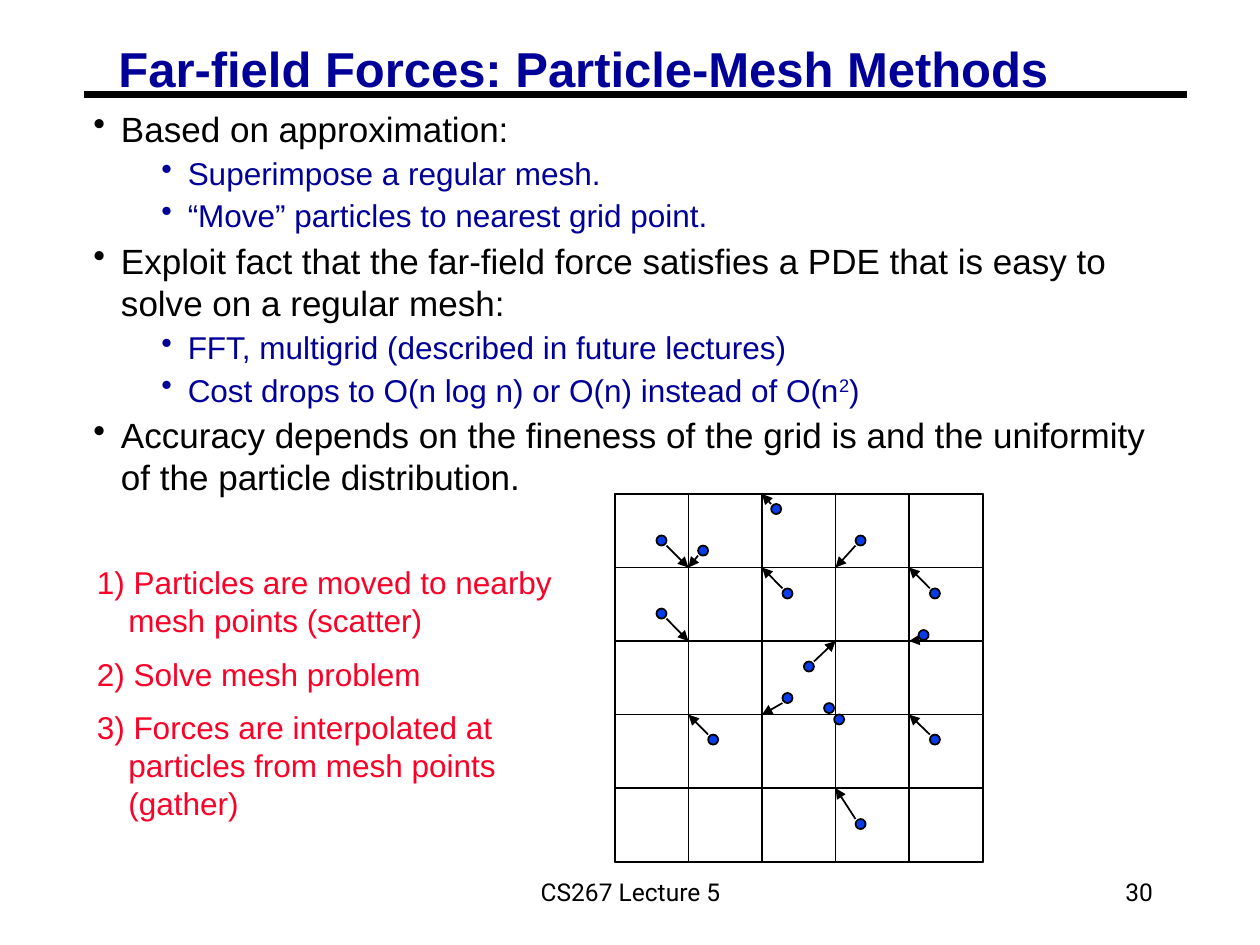
from lxml.etree import SubElement
from pptx import Presentation
from pptx.dml.color import RGBColor
from pptx.enum.shapes import MSO_CONNECTOR, MSO_SHAPE
from pptx.enum.text import MSO_ANCHOR, MSO_AUTO_SIZE, PP_ALIGN
from pptx.oxml.ns import qn
from pptx.util import Inches, Pt

BLACK, NAVY, RED, BLUE = "000000", "000099", "FC0128", "063DE8"
MESH_LEFT, MESH_TOP, MESH_SIZE, CELLS = 4.88, 3.92, 2.92, 5
CELL = MESH_SIZE / CELLS
DOT = 0.08

# Level and spans of each bullet; a span is (text, is superscript)
BULLETS = [
    (0, [("Based on approximation:", False)]),
    (1, [("Superimpose a regular mesh.", False)]),
    (1, [("“Move” particles to nearest grid point.", False)]),
    (0, [("Exploit fact that the far-field force satisfies a PDE that is easy "
          "to solve on a regular mesh:", False)]),
    (1, [("FFT, multigrid (described in future lectures)", False)]),
    (1, [("Cost drops to O(n log n) or O(n) instead of O(n", False),
         ("2", True), (")", False)]),
    (0, [("Accuracy depends on the fineness of the grid is and the uniformity "
          "of the particle distribution.", False)]),
]
# Size, colour, margin and hanging indent of each bullet level
LEVELS = [(20, BLACK, 0.22, 0.22), (18, NAVY, 0.75, 0.21)]

STEPS = [
    "1) Particles are moved to nearby mesh points (scatter)",
    "2) Solve mesh problem",
    "3) Forces are interpolated at particles from mesh points (gather)",
]

# Left, top and the (column, row) of the mesh point each particle moves to
PARTICLES = [
    (5.21, 4.25, (1, 1)), (5.54, 4.33, (1, 1)), (5.21, 4.83, (1, 2)),
    (6.21, 5.5, (2, 3)), (6.12, 4, (2, 0)), (6.38, 5.25, (3, 2)),
    (5.62, 5.83, (1, 3)), (6.54, 5.58, None), (7.29, 5, (4, 2)),
    (6.62, 5.67, None), (6.79, 4.25, (3, 1)), (6.79, 6.5, (3, 4)),
    (7.38, 5.83, (4, 3)), (7.38, 4.67, (4, 1)), (6.21, 4.67, (2, 1)),
]


def color(value):
    return RGBColor.from_string(value)


def add_span(para, text, size, hue, font="Arial", bold=False):
    span = para.add_run()
    span.text = text
    span.font.name, span.font.size, span.font.bold = font, Pt(size), bold
    span.font.color.rgb = color(hue)
    return span


def set_frame(frame, inset_x, inset_y, anchor=MSO_ANCHOR.TOP):
    frame.word_wrap = True
    frame.auto_size = MSO_AUTO_SIZE.NONE
    frame.vertical_anchor = anchor
    frame.margin_left = frame.margin_right = Inches(inset_x)
    frame.margin_top = frame.margin_bottom = Inches(inset_y)


def add_box(page, left, top, width, height, inset_x=0.1, inset_y=0.05,
            anchor=MSO_ANCHOR.TOP):
    box = page.shapes.add_textbox(Inches(left), Inches(top),
                                  Inches(width), Inches(height))
    set_frame(box.text_frame, inset_x, inset_y, anchor)
    return box.text_frame


def add_paragraph(frame, index):
    return frame.add_paragraph() if index else frame.paragraphs[0]


def set_hanging(para, margin, hang, bullet=None):
    properties = para._p.get_or_add_pPr()
    properties.set("marL", str(Inches(margin)))
    properties.set("indent", str(-Inches(hang)))
    if bullet:
        SubElement(properties, qn("a:buChar")).set("char", bullet)


def add_title(page, text):
    title = page.shapes.title
    title.left, title.top = Inches(0.87), Inches(0.34)
    title.width, title.height = Inches(7.79), Inches(0.46)
    set_frame(title.text_frame, 0.07, 0.03)
    para = title.text_frame.paragraphs[0]
    para.alignment, para.line_spacing = PP_ALIGN.LEFT, 0.87
    add_span(para, text, 28, NAVY, bold=True)


def add_bullets(page):
    frame = add_box(page, 0.67, 0.82, 8.75, 3.23, 0.07, 0.03)
    for index, (level, spans) in enumerate(BULLETS):
        size, hue, margin, hang = LEVELS[level]
        para = add_paragraph(frame, index)
        para.level = level
        para.space_before = Pt(0.15 * size)
        set_hanging(para, margin, hang, "•")
        for text, superscript in spans:
            span = add_span(para, text, size, hue)
            if superscript:
                span._r.get_or_add_rPr().set("baseline", "30000")


def add_steps(page):
    frame = add_box(page, 0.67, 4.42, 3.88, 2.22)
    for index, text in enumerate(STEPS):
        para = add_paragraph(frame, index)
        para.space_before = Pt(9)
        set_hanging(para, 0.25, 0.25)
        add_span(para, text, 18, RED)


def add_footer(page, left, width, text, alignment):
    frame = add_box(page, left, 6.83, width, 0.5, anchor=MSO_ANCHOR.MIDDLE)
    para = frame.paragraphs[0]
    para.alignment = alignment
    add_span(para, text, 14, BLACK, "Roboto")


def add_line(shapes, start, end, weight, arrow=False):
    line = shapes.add_connector(MSO_CONNECTOR.STRAIGHT,
                                *map(Inches, (*start, *end)))
    line.line.color.rgb, line.line.width = color(BLACK), Pt(weight)
    if arrow:
        SubElement(line.line._get_or_add_ln(),
                   qn("a:tailEnd")).set("type", "triangle")
    SubElement(line._element.spPr, qn("a:effectLst"))


def add_outline(shapes, kind, left, top, width, height, fill=None):
    shape = shapes.add_shape(kind, *map(Inches, (left, top, width, height)))
    shape.shadow.inherit = False
    shape.line.color.rgb, shape.line.width = color(BLACK), Pt(1)
    if fill:
        shape.fill.solid()
        shape.fill.fore_color.rgb = color(fill)
    else:
        shape.fill.background()


def add_mesh(shapes):
    """Overlay column and row strips; the strips around row 3 already bound it."""
    for column in range(CELLS):
        add_outline(shapes, MSO_SHAPE.RECTANGLE,
                    MESH_LEFT + column * CELL, MESH_TOP, CELL, MESH_SIZE)
    for row in (0, 1, 2, 4):
        add_outline(shapes, MSO_SHAPE.RECTANGLE,
                    MESH_LEFT, MESH_TOP + row * CELL, MESH_SIZE, CELL)


def add_particle(shapes, left, top, node):
    """Draw a dot and an arrow from its corner nearest the mesh point."""
    add_outline(shapes, MSO_SHAPE.OVAL, left, top, DOT, DOT, BLUE)
    if node:
        x, y = MESH_LEFT + node[0] * CELL, MESH_TOP + node[1] * CELL
        start = (left + DOT * (x > left), top + DOT * (y > top))
        add_line(shapes, start, (x, y), 1, arrow=True)


def main():
    deck = Presentation()
    deck.slide_width, deck.slide_height = Inches(10), Inches(7.5)
    page = deck.slides.add_slide(deck.slide_layouts[5])
    add_line(page.shapes, (0.67, 0.75), (9.42, 0.75), 3.75)
    add_footer(page, 3.42, 3.17, "CS267 Lecture 5", PP_ALIGN.CENTER)
    add_footer(page, 7.17, 2.08, "30", PP_ALIGN.RIGHT)
    add_title(page, "Far-field Forces: Particle-Mesh Methods")
    add_bullets(page)
    diagram = page.shapes.add_group_shape().shapes
    add_mesh(diagram)
    for left, top, node in PARTICLES:
        add_particle(diagram, left, top, node)
    add_steps(page)
    deck.save("out.pptx")


if __name__ == "__main__":
    main()
